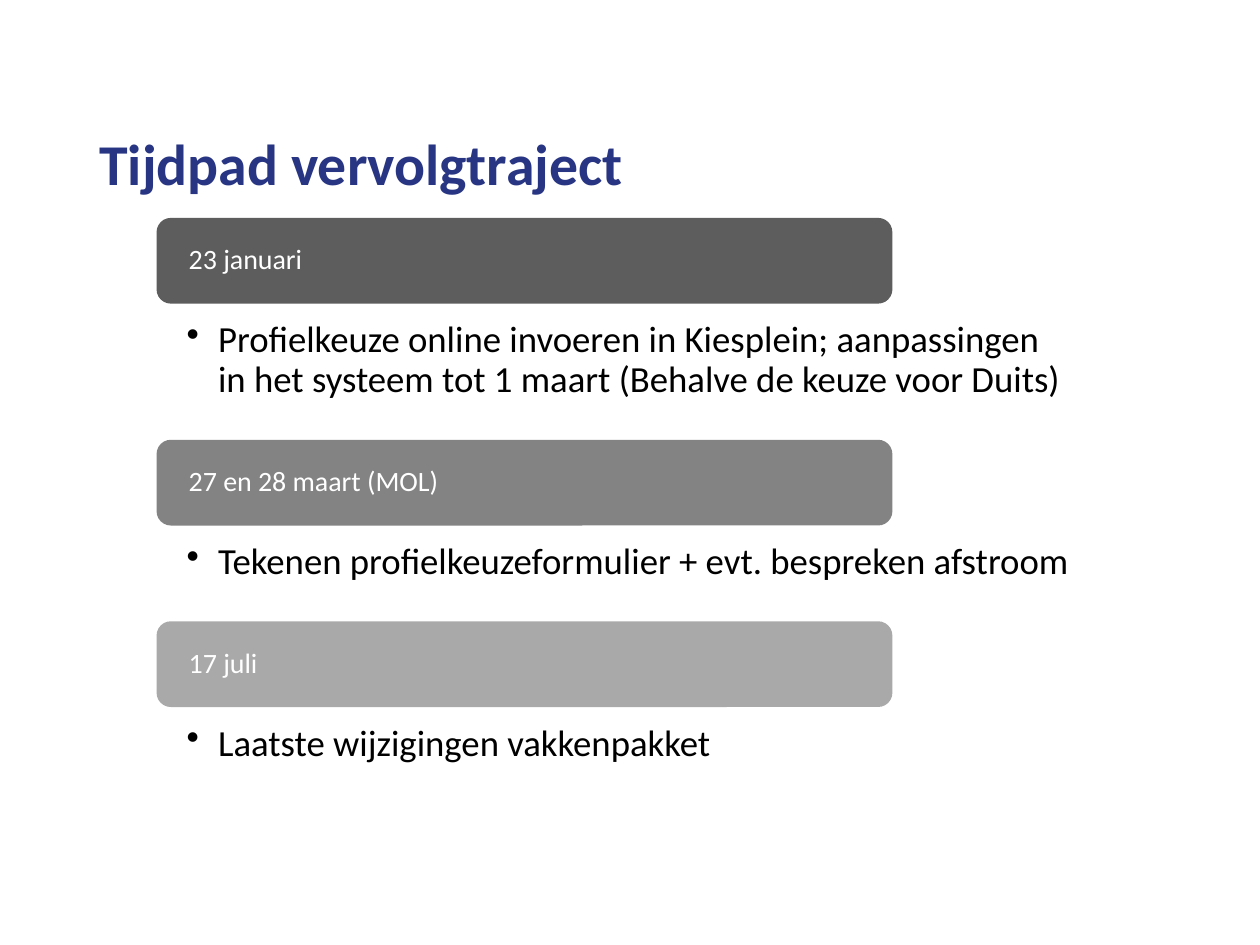
from lxml import etree
from pptx import Presentation
from pptx import util as u
from pptx.dml import color
from pptx.enum import shapes, text
from pptx.oxml import ns

COLORS = {"title": "283583", "text": "000000", "white": "FFFFFF",
          "dark": "5D5D5D", "mid": "838383", "light": "A9A9A9"}


class Deck:
    font = "Calibri"

    def __init__(self, width, height):
        self.prs = Presentation()
        self.prs.slide_width, self.prs.slide_height = u.Pt(width), u.Pt(height)
        self.s = self.prs.slides.add_slide(self.prs.slide_layouts[6])

    def label(self, sp, words, size, col, anchor, insets=None, bold=False, bullet=False):
        tf = sp.text_frame
        fmt = {"word_wrap": True, "vertical_anchor": anchor}
        if insets:
            sides = ("left", "top", "right", "bottom")
            fmt.update({f"margin_{k}": u.Pt(v) for k, v in zip(sides, insets)})
        for key, value in fmt.items():
            setattr(tf, key, value)
        p = tf.paragraphs[0]
        if bullet:
            pPr = p._p.get_or_add_pPr()
            pPr.set("marL", str(u.Pt(18)))
            pPr.set("indent", str(-u.Pt(18)))
            etree.SubElement(pPr, ns.qn("a:buChar")).set("char", "•")
        p.alignment, p.line_spacing = text.PP_ALIGN.LEFT, 0.9
        r = p.add_run()
        r.text = words
        for key, value in {"name": self.font, "size": u.Pt(size), "bold": bold}.items():
            setattr(r.font, key, value)
        r.font.color.rgb = color.RGBColor.from_string(COLORS[col])

    def shape(self, kind, box, fill):
        sp = self.s.shapes.add_shape(kind, *map(u.Pt, box))
        sp.shadow.inherit = False
        sp.fill.solid()
        sp.fill.fore_color.rgb = color.RGBColor.from_string(COLORS[fill])
        sp.line.fill.background()
        return sp

    def title(self, box, words):
        sp = self.s.shapes.add_textbox(*map(u.Pt, box))
        self.label(sp, words, 33, "title", text.MSO_ANCHOR.MIDDLE, bold=True)

    def panel(self, box, words):
        sp = self.shape(shapes.MSO_SHAPE.RECTANGLE, box, "white")
        rgb = sp._element.spPr.find(ns.qn("a:solidFill")).find(ns.qn("a:srgbClr"))
        etree.SubElement(rgb, ns.qn("a:alpha")).set("val", "90000")
        self.label(sp, words, 21, "text", text.MSO_ANCHOR.TOP,
                   (46.8, 34.5, 46.8, 11.5), bullet=True)

    def bar(self, box, words, fill):
        sp = self.shape(shapes.MSO_SHAPE.ROUNDED_RECTANGLE, box, fill)
        self.label(sp, words, 16, "white", text.MSO_ANCHOR.MIDDLE, (16, 0, 16, 0))


# Date, action, bar colour, panel height
STEPS = [
    ("23 januari", "Profielkeuze online invoeren in Kiesplein; aanpassingen in "
     "het systeem tot 1 maart (Behalve de keuze voor Duits)", "dark", 93.6),
    ("27 en 28 maart (MOL)", "Tekenen profielkeuzeformulier + evt. bespreken afstroom",
     "mid", 70.5),
    ("17 juli", "Laatste wijzigingen vakkenpakket", "light", 70.5),
]
BAR_HEIGHT, GAP = 49, 33.2


def main():
    deck = Deck(720, 540)
    deck.title((49.7, 28.8, 620.6, 133.2), "Tijdpad vervolgtraject")

    # Each bar straddles the top edge of its panel
    top = 149
    for date, action, fill, height in STEPS:
        deck.panel((59.8, top, 601.2, height), action)
        deck.bar((89.5, top - BAR_HEIGHT / 2, 420.5, BAR_HEIGHT), date, fill)
        top += height + GAP

    deck.prs.save("out.pptx")


if __name__ == "__main__":
    main()
